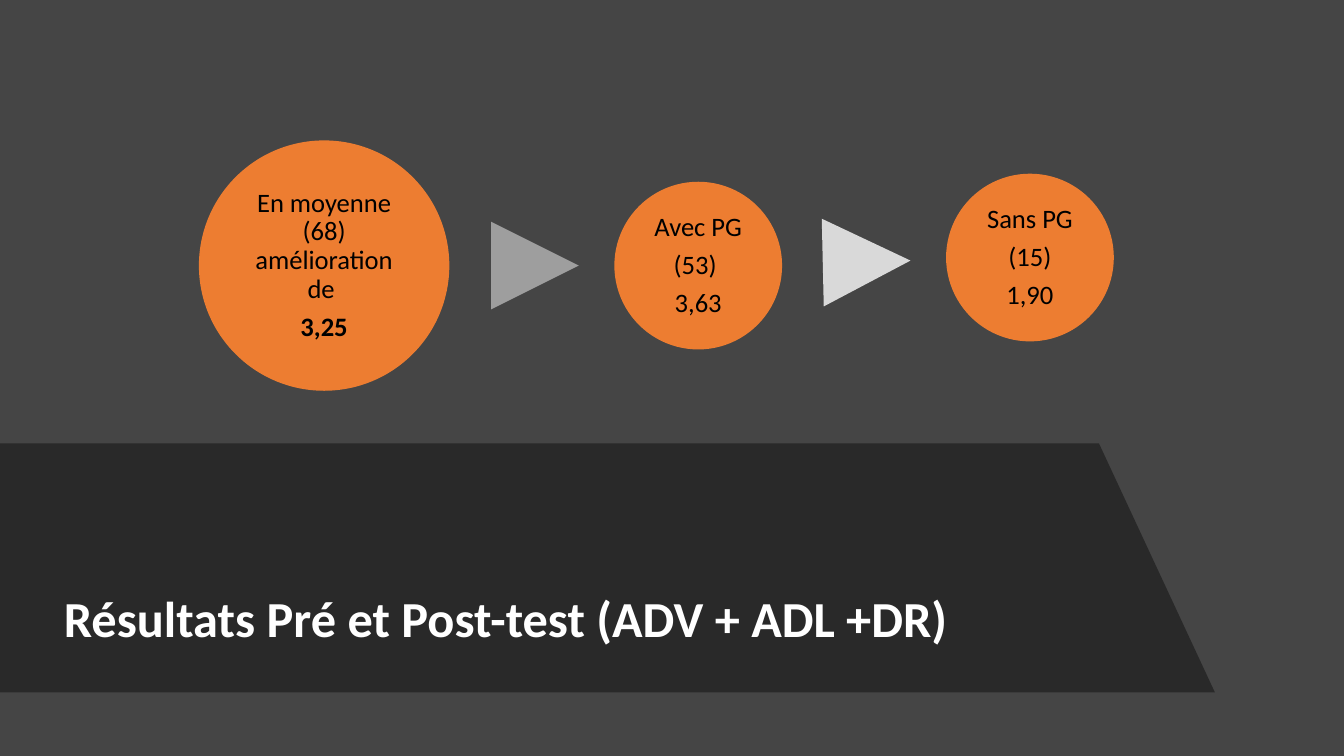
from dataclasses import dataclass

from lxml.etree import SubElement
from pptx import Presentation
from pptx.dml.color import RGBColor as Color
from pptx.enum.shapes import MSO_SHAPE as Shape
from pptx.enum.text import MSO_ANCHOR as Anchor, PP_ALIGN as Align
from pptx.oxml.ns import qn
from pptx.util import Inches, Pt


@dataclass(frozen=True)
class Theme:
    backdrop: str = "454545"
    banner: str = "262626"
    banner_alpha: int = 88
    circle: str = "ED7D31"
    title_ink: str = "FFFFFF"
    circle_ink: str = "000000"
    font: str = "Calibri"
    title_size: int = 36
    circle_size: int = 19
    line_spacing: float = 0.9
    space_after: float = 0.35


def paint(shape, colour):
    shape.shadow.inherit = False
    shape.fill.solid()
    shape.fill.fore_color.rgb = Color.from_string(colour)
    shape.line.fill.background()


def style(para, size, colour, bold, align):
    para.alignment = align
    para.line_spacing = theme.line_spacing
    for span in para.runs:
        span.font.name = theme.font
        span.font.size = Pt(size)
        span.font.bold = bold
        span.font.color.rgb = Color.from_string(colour)


theme = Theme()
deck = Presentation()
deck.slide_width, deck.slide_height = Inches(13.33), Inches(7.5)
page = deck.slides.add_slide(deck.slide_layouts[5])
page.background.fill.solid()
page.background.fill.fore_color.rgb = Color.from_string(theme.backdrop)

banner_top, banner_bottom = Inches(4.4), Inches(6.87)
outline = page.shapes.build_freeform(0, banner_top)
outline.add_line_segments([
    (Inches(10.9), banner_top),
    (Inches(12.05), banner_bottom),
    (0, banner_bottom),
])
banner = outline.convert_to_shape()
paint(banner, theme.banner)
banner_colour = banner.element.spPr.find(qn("a:solidFill"))[0]
SubElement(banner_colour, qn("a:alpha"), val=str(theme.banner_alpha * 1000))

title = page.shapes.title
title.left, title.top = Inches(0.42), Inches(5.82)
title.width, title.height = Inches(10.13), Inches(0.68)
title.text_frame.text = " Résultats Pré et Post-test (ADV + ADL +DR)"
title.text_frame.vertical_anchor = Anchor.MIDDLE
title.text_frame.word_wrap = True
style(title.text_frame.paragraphs[0], theme.title_size, theme.title_ink, True, Align.LEFT)
page.shapes._spTree.append(title.element)

circles = [
    (1.98, 1.4, 2.47, ["En moyenne (68) amélioration de ", "3,25"], "3,25"),
    (6.1, 1.81, 1.65, ["Avec PG", "(53) ", "3,63"], None),
    (9.39, 1.73, 1.65, ["Sans PG", "(15)", "1,90"], None),
]
for left, top, diameter, lines, bold_line in circles:
    circle = page.shapes.add_shape(
        Shape.OVAL, Inches(left), Inches(top), Inches(diameter), Inches(diameter))
    paint(circle, theme.circle)
    circle.line.color.rgb = Color.from_string(theme.circle)
    circle.line.width = Pt(1)
    frame = circle.text_frame
    frame.text = "\n".join(lines)
    frame.word_wrap = True
    frame.vertical_anchor = Anchor.MIDDLE
    frame.margin_left = frame.margin_right = Inches(0.03)
    frame.margin_top = frame.margin_bottom = Inches(0.03)
    for para, line in zip(frame.paragraphs, lines):
        style(para, theme.circle_size, theme.circle_ink, line == bold_line, Align.CENTER)
        para.space_after = Pt(theme.circle_size * theme.space_after)

arrow_size = Inches(0.87)
for left, top, turn, colour in [(4.87, 2.2, 90, "9E9E9E"), (8.16, 2.16, 88.7, "D9D9D9")]:
    arrow = page.shapes.add_shape(
        Shape.ISOSCELES_TRIANGLE, Inches(left), Inches(top), arrow_size, arrow_size)
    arrow.rotation = turn
    paint(arrow, colour)

deck.save("out.pptx")
